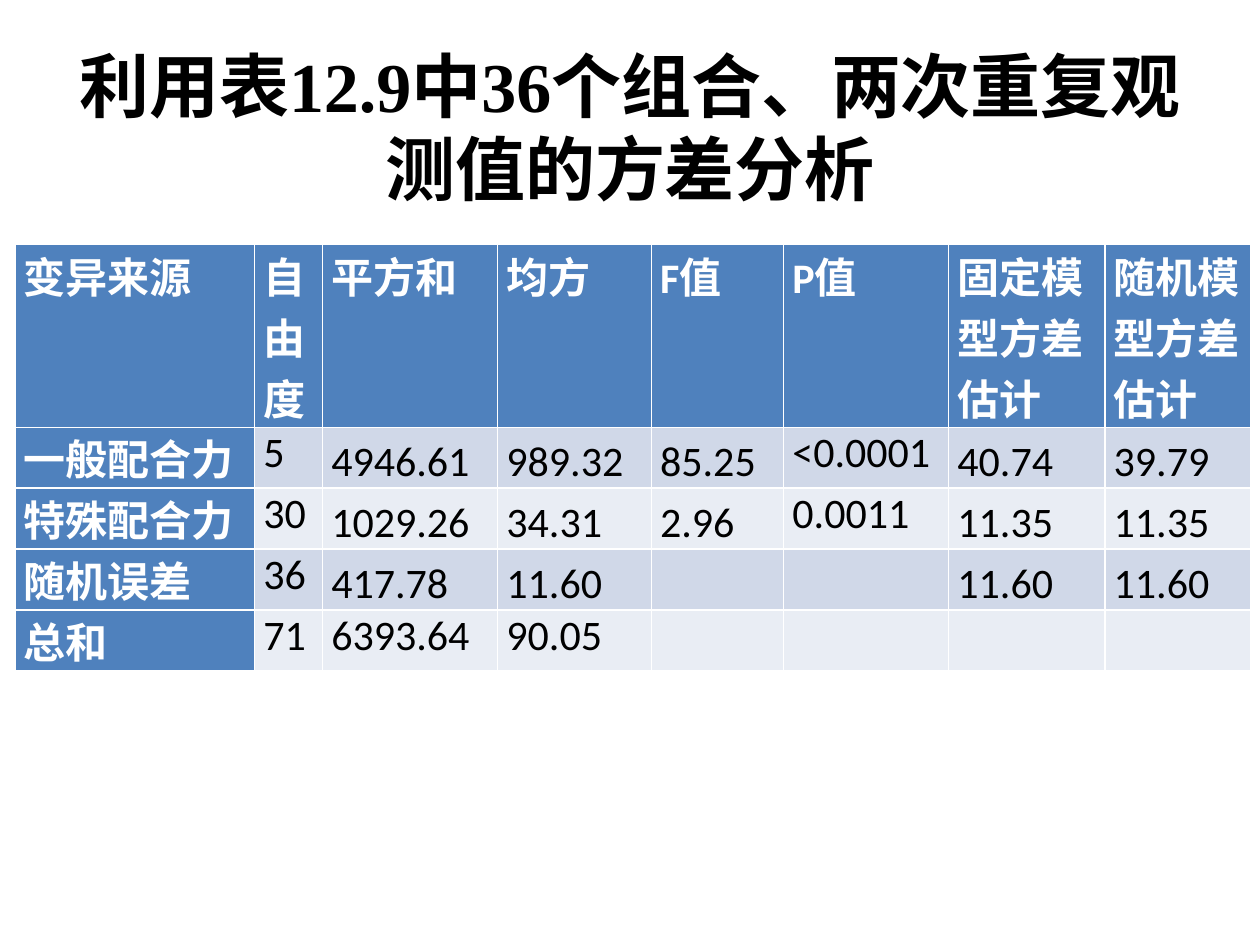
from pptx import Presentation
from pptx import util as u
from pptx.dml.color import RGBColor
from pptx.enum import text

COLORS = {"ink": "000000", "white": "FFFFFF", "header": "4F81BD",
          "odd": "D0D8E8", "even": "E9EDF4"}
TITLE = "利用表12.9中36个组合、两次重复观测值的方差分析"
ANOVA = [
    ["变异来源", "自由度", "平方和", "均方", "F值", "P值", "固定模型方差估计", "随机模型方差估计"],
    ["一般配合力", "5", "4946.61", "989.32", "85.25", "<0.0001", "40.74", "39.79"],
    ["特殊配合力", "30", "1029.26", "34.31", "2.96", "0.0011", "11.35", "11.35"],
    ["随机误差", "36", "417.78", "11.60", "", "", "11.60", "11.60"],
    ["总和", "71", "6393.64", "90.05", "", "", "", ""],
]
COLUMN_WIDTHS = [1.9, 0.54, 1.39, 1.22, 1.05, 1.31, 1.24, 1.16]
ROW_HEIGHTS = [1.44] + [0.48] * 4
TOP_COLUMNS = (0, 1, 5)
CELL_FORMAT = {"margin_left": u.Inches(0.07), "margin_right": u.Inches(0.07),
               "margin_top": 0, "margin_bottom": 0}


def apply(target, values):
    for name, value in values.items():
        setattr(target, name, value)


class SlideBuilder:
    def __init__(self, slide):
        self.slide = slide

    def color(self, key):
        return RGBColor.from_string(COLORS[key])

    def style(self, paragraph, font, size, color, bold, align):
        paragraph.alignment = align
        apply(paragraph.font, {"name": font, "size": u.Pt(size), "bold": bold})
        paragraph.font.color.rgb = self.color(color)

    def title(self, words, left, top, width, height):
        heading = self.slide.shapes.title
        apply(heading, {"left": u.Inches(left), "top": u.Inches(top),
                        "width": u.Inches(width), "height": u.Inches(height)})
        frame = heading.text_frame
        apply(frame, {"text": words, "word_wrap": True,
                      "vertical_anchor": text.MSO_ANCHOR.MIDDLE})
        self.style(frame.paragraphs[0], "Times New Roman", 40, "ink", True,
                   text.PP_ALIGN.CENTER)

    def table(self, rows, left, top):
        anova = self.slide.shapes.add_table(
            len(rows), len(rows[0]), u.Inches(left), u.Inches(top),
            u.Inches(sum(COLUMN_WIDTHS)), u.Inches(sum(ROW_HEIGHTS))).table
        anova.first_col = True
        for column, width in zip(anova.columns, COLUMN_WIDTHS):
            column.width = u.Inches(width)
        for row, height in zip(anova.rows, ROW_HEIGHTS):
            row.height = u.Inches(height)
        for r, values in enumerate(rows):
            for c, value in enumerate(values):
                self.cell(anova.cell(r, c), value, r, c, len(rows) - 1)

    def cell(self, cell, value, r, c, total_row):
        heading = r == 0 or c == 0
        at_top = r in (0, total_row) or c in TOP_COLUMNS
        apply(cell, CELL_FORMAT)
        cell.vertical_anchor = text.MSO_ANCHOR.TOP if at_top else text.MSO_ANCHOR.BOTTOM
        cell.fill.solid()
        band = "odd" if r % 2 else "even"
        cell.fill.fore_color.rgb = self.color("header" if heading else band)
        cell.text = value
        self.style(cell.text_frame.paragraphs[0], "Calibri", 24,
                   "white" if heading else "ink", heading,
                   text.PP_ALIGN.JUSTIFY if r else text.PP_ALIGN.LEFT)


def main():
    deck = Presentation()
    apply(deck, {"slide_width": u.Inches(10), "slide_height": u.Inches(7.5)})
    builder = SlideBuilder(deck.slides.add_slide(deck.slide_layouts[5]))
    builder.title(TITLE, 0.5, 0.3, 9, 1.4)
    builder.table(ANOVA, 0.12, 1.94)
    deck.save("out.pptx")


if __name__ == "__main__":
    main()
